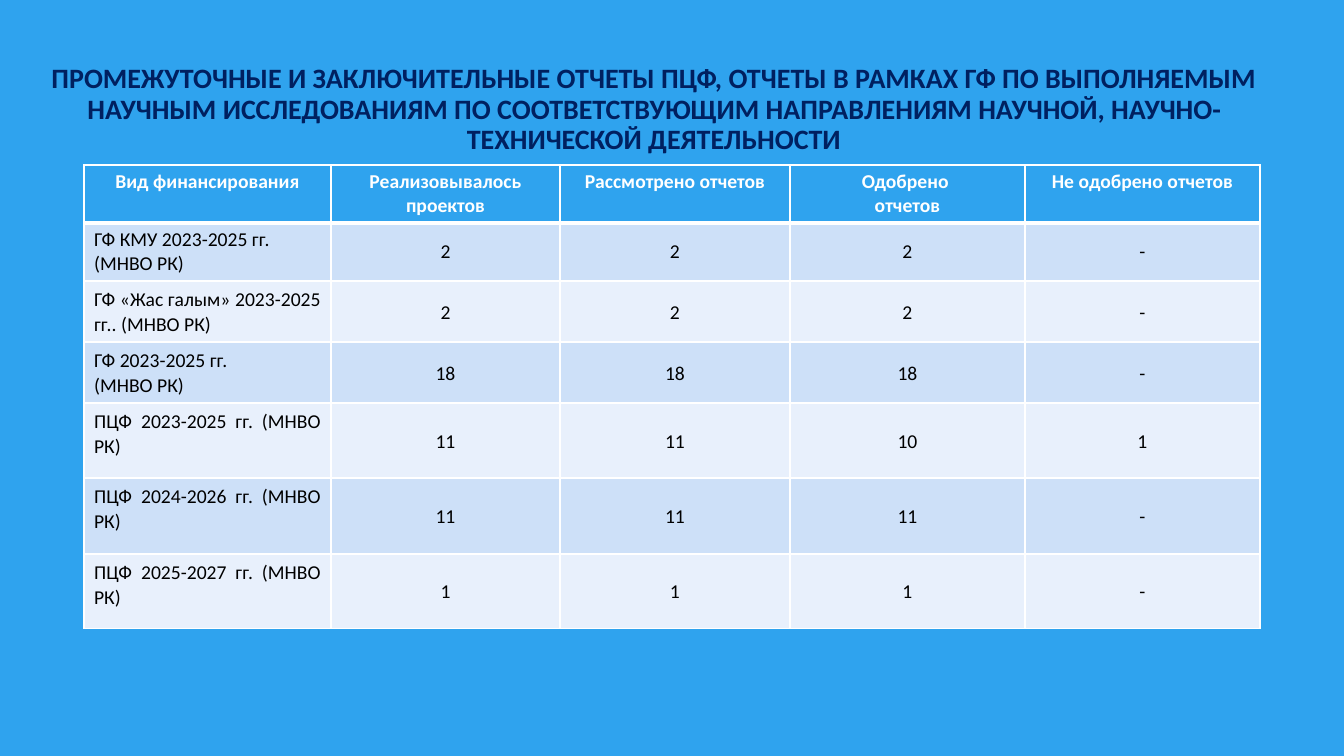
import pptx
import pptx.util
import pptx.dml.color
import pptx.enum.text
import pptx.oxml
import pptx.oxml.ns

ALIGN = pptx.enum.text.PP_ALIGN
ANCHOR = pptx.enum.text.MSO_ANCHOR

TITLE = (
    "ПРОМЕЖУТОЧНЫЕ И ЗАКЛЮЧИТЕЛЬНЫЕ ОТЧЕТЫ ПЦФ, ОТЧЕТЫ В РАМКАХ ГФ ПО ВЫПОЛНЯЕМЫМ "
    "НАУЧНЫМ ИССЛЕДОВАНИЯМ ПО СООТВЕТСТВУЮЩИМ НАПРАВЛЕНИЯМ НАУЧНОЙ, "
    "НАУЧНО-ТЕХНИЧЕСКОЙ ДЕЯТЕЛЬНОСТИ"
)
REPORTS = [
    ["Вид финансирования", "Реализовывалось проектов", "Рассмотрено отчетов",
     "Одобрено \nотчетов", "Не одобрено отчетов"],
    ["ГФ КМУ 2023-2025 гг. (МНВО РК)", "2", "2", "2", "-"],
    ["ГФ «Жас галым» 2023-2025 гг.. (МНВО РК)", "2", "2", "2", "-"],
    ["ГФ 2023-2025 гг.\n(МНВО РК)", "18", "18", "18", "-"],
    ["ПЦФ 2023-2025 гг. (МНВО РК)", "11", "11", "10", "1"],
    ["ПЦФ 2024-2026 гг. (МНВО РК)", "11", "11", "11", "-"],
    ["ПЦФ 2025-2027 гг. (МНВО РК)", "1", "1", "1", "-"],
]
COLUMN_WIDTHS = [247, 229, 230, 235, 235]
ROW_HEIGHTS = [58, 58, 61, 61, 75, 76, 75]


class ReportSlide:
    SCALE = 914400 / 100.8
    FONT = "Calibri"
    COLORS = {
        "sky": "2FA3EE",
        "navy": "002060",
        "white": "FFFFFF",
        "black": "000000",
        "band_dark": "CDE0F8",
        "band_light": "E8F0FC",
    }

    def __init__(self, presentation):
        self.slide = presentation.slides.add_slide(presentation.slide_layouts[6])
        background = self.slide.background.fill
        background.solid()
        background.fore_color.rgb = self.color("sky")

    @classmethod
    def px(cls, length):
        return pptx.util.Emu(round(length * cls.SCALE))

    def color(self, name):
        return pptx.dml.color.RGBColor.from_string(self.COLORS[name])

    def set_text(self, frame, text, size, color, bold, align, spacing):
        frame.text = text
        frame.word_wrap = True
        for paragraph in frame.paragraphs:
            paragraph.alignment = align
            paragraph.line_spacing = spacing
            for run in paragraph.runs:
                run.font.name = self.FONT
                run.font.size = pptx.util.Pt(size)
                run.font.bold = bold
                run.font.color.rgb = self.color(color)

    def title(self, text, left, top, width, height):
        heading = self.slide.shapes.add_textbox(*map(self.px, (left, top, width, height)))
        heading.text_frame.vertical_anchor = ANCHOR.MIDDLE
        self.set_text(heading.text_frame, text, 20, "navy", True, ALIGN.CENTER, 0.9)

    def borders(self, cell, top, bottom):
        properties = cell._tc.get_or_add_tcPr()
        for side, points in (("L", 1), ("R", 1), ("T", top), ("B", bottom)):
            properties.append(pptx.oxml.parse_xml(
                f'<a:ln{side} {pptx.oxml.ns.nsdecls("a")} w="{int(pptx.util.Pt(points))}">'
                f'<a:solidFill><a:srgbClr val="{self.COLORS["white"]}"/></a:solidFill>'
                f'</a:ln{side}>'
            ))

    def cell(self, cell, text, row, column):
        header = row == 0
        self.borders(cell, 3 if row == 1 else 1, 3 if header else 1)
        band = "band_dark" if row % 2 else "band_light"
        cell.fill.solid()
        cell.fill.fore_color.rgb = self.color("sky" if header else band)
        label = column == 0 and not header
        align = ALIGN.CENTER
        if label:
            align = ALIGN.LEFT if row == 1 else ALIGN.JUSTIFY
        cell.vertical_anchor = ANCHOR.TOP if header or label else ANCHOR.MIDDLE
        self.set_text(cell.text_frame, text, 14, "white" if header else "black",
                      header, align, 1.07 if row > 1 else 1.0)

    def table(self, rows, left, top, widths, heights):
        bounds = map(self.px, (left, top, sum(widths), sum(heights)))
        grid = self.slide.shapes.add_table(len(rows), len(widths), *bounds).table
        for column, width in zip(grid.columns, widths):
            column.width = self.px(width)
        for line, height in zip(grid.rows, heights):
            line.height = self.px(height)
        for row, texts in enumerate(rows):
            for column, text in enumerate(texts):
                self.cell(grid.cell(row, column), text, row, column)


def main():
    presentation = pptx.Presentation()
    presentation.slide_width = ReportSlide.px(1344)
    presentation.slide_height = ReportSlide.px(756)
    reports = ReportSlide(presentation)
    reports.title(TITLE, 38, 23, 1232, 174)
    reports.table(REPORTS, 84, 165, COLUMN_WIDTHS, ROW_HEIGHTS)
    presentation.save("out.pptx")


if __name__ == "__main__":
    main()
